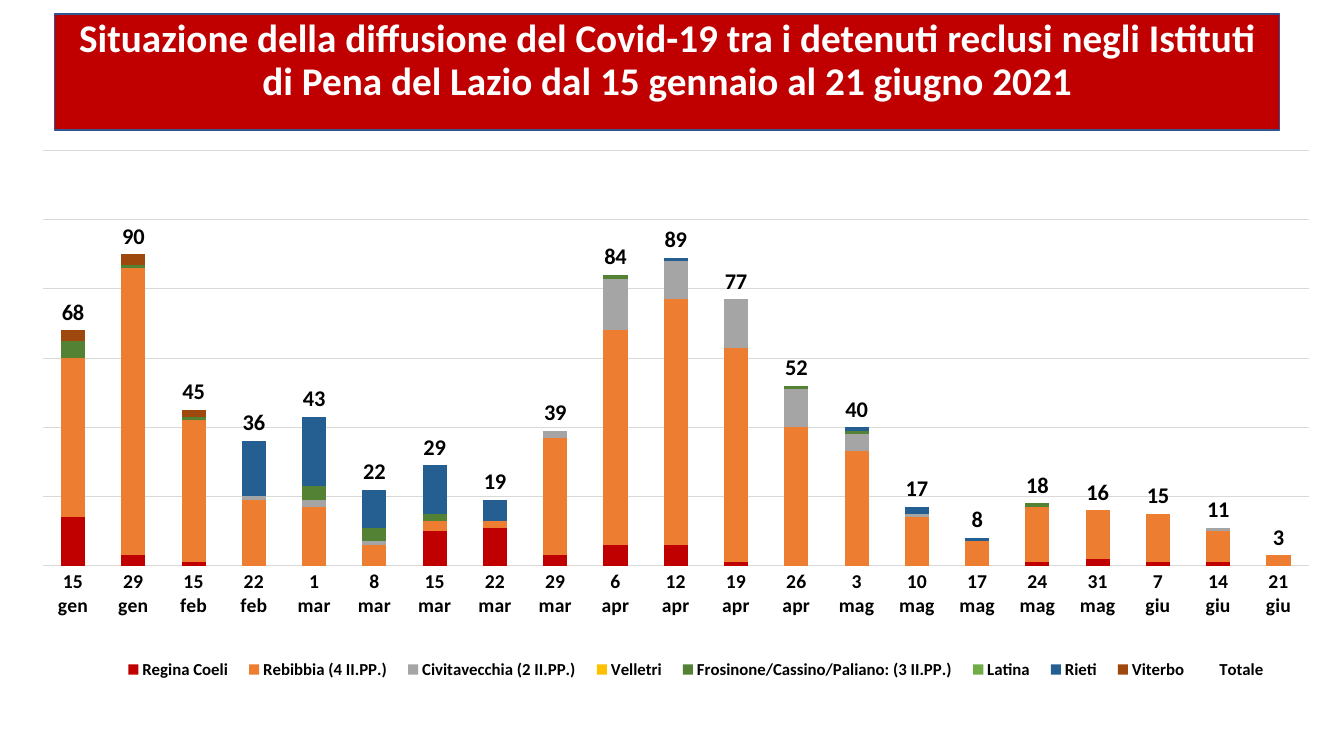
from lxml import etree
from pptx import Presentation
from pptx.chart.data import CategoryChartData
from pptx.dml.color import RGBColor
from pptx.enum.chart import XL_CHART_TYPE, XL_LABEL_POSITION, XL_LEGEND_POSITION, XL_TICK_MARK
from pptx.enum.shapes import MSO_SHAPE
from pptx.enum.text import MSO_ANCHOR, PP_ALIGN
from pptx.oxml.ns import qn
from pptx.util import Inches, Pt

STACKED = XL_CHART_TYPE.COLUMN_STACKED
INSIDE_BASE = XL_LABEL_POSITION.INSIDE_BASE
BOTTOM = XL_LEGEND_POSITION.BOTTOM
NO_TICK = XL_TICK_MARK.NONE
RECTANGLE = MSO_SHAPE.RECTANGLE
TOP = MSO_ANCHOR.TOP
CENTER = PP_ALIGN.CENTER

TITLE = ("Situazione della diffusione del Covid-19 tra i detenuti reclusi negli Istituti "
         "di Pena del Lazio dal 15 gennaio al 21 giugno 2021")
DAYS_BY_MONTH = {
    "gen": [15, 29],
    "feb": [15, 22],
    "mar": [1, 8, 15, 22, 29],
    "apr": [6, 12, 19, 26],
    "mag": [3, 10, 17, 24, 31],
    "giu": [7, 14, 21],
}
DATES = [f"{day}\n{month}" for month, days in DAYS_BY_MONTH.items() for day in days]
NO_CASES = [0] * len(DATES)
PRISONS = [
    ("Regina Coeli", "C00000",
     [14, 3, 1, 0, 0, 0, 10, 11, 3, 6, 6, 1, 0, 0, 0, 0, 1, 2, 1, 1, 0]),
    ("Rebibbia (4 II.PP.)", "ED7D31",
     [46, 83, 41, 19, 17, 6, 3, 2, 34, 62, 71, 62, 40, 33, 14, 7, 16, 14, 14, 9, 3]),
    ("Civitavecchia (2 II.PP.)", "A5A5A5",
     [0, 0, 0, 1, 2, 1, 0, 0, 2, 15, 11, 14, 11, 5, 1, 0, 0, 0, 0, 1, 0]),
    ("Velletri", "FFC000", NO_CASES),
    ("Frosinone/Cassino/Paliano: (3 II.PP.)", "548235",
     [5, 1, 1, 0, 4, 4, 2, 0, 0, 1, 0, 0, 1, 1, 0, 0, 1, 0, 0, 0, 0]),
    ("Latina", "70AD47", NO_CASES),
    ("Rieti", "255E91",
     [0, 0, 0, 16, 20, 11, 14, 6, 0, 0, 1, 0, 0, 1, 2, 1, 0, 0, 0, 0, 0]),
    ("Viterbo", "9E480E", [3, 3, 2] + [0] * 18),
]
# The stated totals are data: some differ by one from the sum of the prisons.
TOTALS = [68, 90, 45, 36, 43, 22, 29, 19, 39, 84, 89, 77, 52, 40, 17, 8, 18, 16, 15, 11, 3]


def color(value):
    return RGBColor.from_string(value)


def place(parent, x, y, width, height, inner=False):
    """Give a plot area or legend a fixed place, in fractions of the chart."""
    for old in parent.findall(qn("c:layout")):
        parent.remove(old)
    layout = etree.Element(qn("c:layout"))
    manual = etree.SubElement(layout, qn("c:manualLayout"))
    settings = [("xMode", "edge"), ("yMode", "edge"),
                ("x", x), ("y", y), ("w", width), ("h", height)]
    if inner:
        settings.insert(0, ("layoutTarget", "inner"))
    for name, value in settings:
        etree.SubElement(manual, qn(f"c:{name}")).set("val", str(value))
    position = parent.find(qn("c:legendPos"))
    if position is None:
        parent.insert(0, layout)
    else:
        position.addnext(layout)


class SlideBuilder:
    def __init__(self, slide):
        self.slide = slide
        self.font_name = "Calibri"
        self.text_color = "000000"
        self.grid_color = "D9D9D9"

    def style_font(self, font, size, bold=True, text_color=None):
        font.name = self.font_name
        font.size = Pt(size)
        font.bold = bold
        font.color.rgb = color(text_color or self.text_color)

    def style_line(self, line, line_color, width):
        line.color.rgb = color(line_color)
        line.width = Pt(width)

    def title(self, text, left, top, width, height):
        box = self.slide.shapes.add_shape(
            RECTANGLE, Inches(left), Inches(top), Inches(width), Inches(height))
        box.shadow.inherit = False
        box.fill.solid()
        box.fill.fore_color.rgb = color("C00000")
        self.style_line(box.line, "325491", 1)
        frame = box.text_frame
        frame.word_wrap = True
        frame.vertical_anchor = TOP
        frame.text = text
        para = frame.paragraphs[0]
        para.alignment = CENTER
        para.line_spacing = 0.9
        self.style_font(para.runs[0].font, 28, text_color="FFFFFF")

    def stacked_chart(self, left, top, width, height):
        data = CategoryChartData()
        data.categories = DATES
        for name, _, cases in PRISONS:
            data.add_series(name, cases)
        data.add_series("Totale", TOTALS)
        chart = self.slide.shapes.add_chart(
            STACKED, Inches(left), Inches(top), Inches(width), Inches(height), data).chart
        self.style_font(chart.font, 10, bold=False)
        chart.has_title = False
        plot = chart.plots[0]
        plot.gap_width = 150
        plot.overlap = 100
        plot.vary_by_categories = False
        *prison_series, total_series = plot.series
        for series, (_, fill, _) in zip(prison_series, PRISONS):
            series.format.fill.solid()
            series.format.fill.fore_color.rgb = color(fill)
        self.label_totals(total_series)
        self.axes(chart)
        self.legend(chart)
        place(chart.plots[0]._element.getparent(), 0.016, 0.02, 0.977, 0.72, inner=True)

    def label_totals(self, series):
        """Keep only the value labels of the invisible series above each stack."""
        series.format.fill.background()
        series.format.line.fill.background()
        labels = series.data_labels
        labels.show_value = True
        labels.position = INSIDE_BASE
        self.style_font(labels.font, 16)

    def axes(self, chart):
        dates = chart.category_axis
        dates.major_tick_mark = NO_TICK
        self.style_font(dates.tick_labels.font, 14)
        self.style_line(dates.format.line, self.grid_color, 0.75)
        cases = chart.value_axis
        cases.minimum_scale = 0
        cases.maximum_scale = 120
        cases.major_unit = 20
        cases.visible = False
        cases.has_major_gridlines = True
        self.style_line(cases.major_gridlines.format.line, self.grid_color, 0.75)

    def legend(self, chart):
        chart.has_legend = True
        chart.legend.position = BOTTOM
        chart.legend.include_in_layout = False
        self.style_font(chart.legend.font, 12)
        place(chart.legend._element, 0.07, 0.89, 0.9, 0.06)


def main():
    deck = Presentation()
    deck.slide_width = Inches(13.33)
    deck.slide_height = Inches(7.5)
    page = SlideBuilder(deck.slides.add_slide(deck.slide_layouts[6]))
    page.title(TITLE, 0.54, 0.14, 12.15, 1.15)
    page.stacked_chart(0.22, 1.38, 12.85, 5.72)
    deck.save("out.pptx")


if __name__ == "__main__":
    main()
